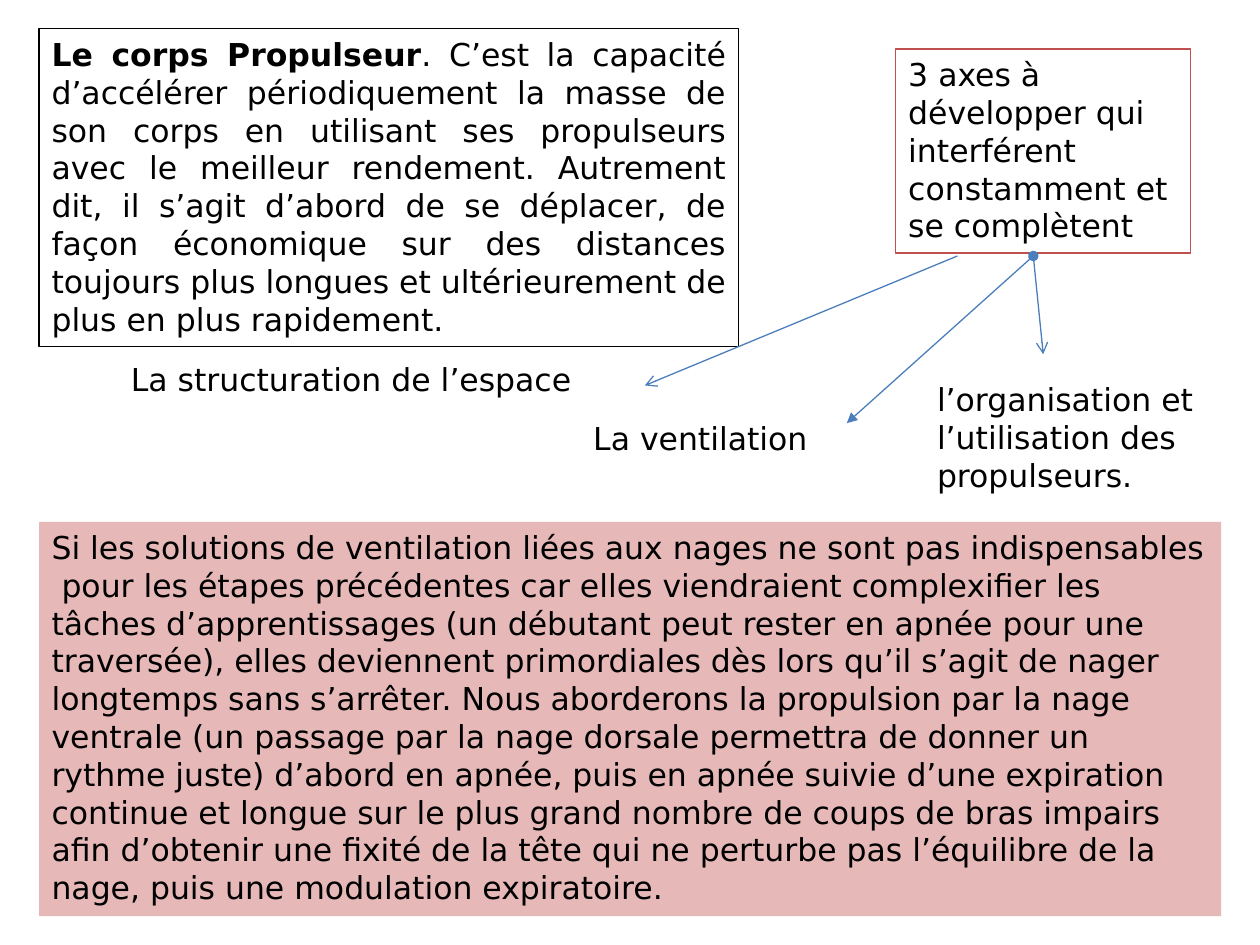
import pptx
import pptx.util
import pptx.dml.color
import pptx.enum.shapes
import pptx.enum.text
import pptx.oxml
import pptx.oxml.ns

Cm, Pt = pptx.util.Cm, pptx.util.Pt
FONT = "DejaVu Sans"


def rgb(value):
    return pptx.dml.color.RGBColor.from_string(value)


def write(sp, runs, align=pptx.enum.text.PP_ALIGN.LEFT):
    """Fill a shape with one paragraph made of (text, bold) runs."""
    tf = sp.text_frame
    tf.word_wrap = True
    tf.auto_size = pptx.enum.text.MSO_AUTO_SIZE.SHAPE_TO_FIT_TEXT
    tf.vertical_anchor = pptx.enum.text.MSO_ANCHOR.TOP
    p = tf.paragraphs[0]
    p.alignment = align
    for text, bold in runs:
        r = p.add_run()
        r.text = text
        r.font.name = FONT
        r.font.size = Pt(18)
        r.font.bold = bold
        r.font.color.rgb = rgb("000000")


def add_box(s, x, y, w, h, fill=None, line=None):
    sp = s.shapes.add_shape(pptx.enum.shapes.MSO_SHAPE.RECTANGLE,
                            Cm(x), Cm(y), Cm(w), Cm(h))
    sp.shadow.inherit = False
    if fill:
        sp.fill.solid()
        sp.fill.fore_color.rgb = rgb(fill)
    else:
        sp.fill.background()
    if line:
        sp.line.color.rgb = rgb(line)
        sp.line.width = Pt(0.75)
    else:
        sp.line.fill.background()
    return sp


def add_arrow(s, x1, y1, x2, y2, tail, head=None):
    c = s.shapes.add_connector(pptx.enum.shapes.MSO_CONNECTOR.STRAIGHT,
                               Cm(x1), Cm(y1), Cm(x2), Cm(y2))
    c.line.color.rgb = rgb("4B7EBC")
    c.line.width = Pt(0.75)
    ln = c.line._get_or_add_ln()
    for tag, kind in (("a:headEnd", head), ("a:tailEnd", tail)):
        if kind:
            end = pptx.oxml.xmlchemy.OxmlElement(tag)
            end.set("type", kind)
            ln.append(end)
    c._element.spPr.append(pptx.oxml.xmlchemy.OxmlElement("a:effectLst"))


def definition(s, x, y, w, h):
    sp = add_box(s, x, y, w, h, line="000000")
    write(sp, [
        ("Le corps Propulseur", True),
        (". C’est la capacité d’accélérer périodiquement la masse de son corps "
         "en utilisant ses propulseurs avec le meilleur rendement. Autrement dit, "
         "il s’agit d’abord de se déplacer, de façon économique sur des distances "
         "toujours plus longues et ultérieurement de plus en plus rapidement.", False),
    ], pptx.enum.text.PP_ALIGN.JUSTIFY)


def axes(s, x, y):
    # Source box
    sp = add_box(s, x + 15.67, y, 5.94, 4.11, line="C0504D")
    write(sp, [("3 axes à développer qui interférent constamment et se complètent", False)])

    # The three axes
    for text, dx, dy, w, h in (
            ("La structuration de l’espace", 0, 6.15, 9.93, 1.02),
            ("l’organisation et l’utilisation des propulseurs.", 16.25, 6.55, 6.15, 2.57),
            ("La ventilation", 9.32, 7.34, 5.16, 1.02)):
        tb = s.shapes.add_textbox(Cm(x + dx), Cm(y + dy), Cm(w), Cm(h))
        write(tb, [(text, False)])

    # Arrows from the box to each axis
    for start, dx, dy, tail, head in (
            (16.91, 10.61, 6.78, "arrow", None),
            (18.44, 14.68, 7.54, "triangle", "oval"),
            (18.44, 18.64, 6.15, "arrow", None)):
        add_arrow(s, x + start, y + 4.17, x + dx, y + dy, tail, head)


def conclusion(s, x, y, w, h):
    sp = add_box(s, x, y, w, h, fill="E6B9B8")
    write(sp, [(
        "Si les solutions de ventilation liées aux nages ne sont pas indispensables "
        " pour les étapes précédentes car elles viendraient complexifier les tâches "
        "d’apprentissages (un débutant peut rester en apnée pour une traversée), "
        "elles deviennent primordiales dès lors qu’il s’agit de nager longtemps sans "
        "s’arrêter. Nous aborderons la propulsion par la nage ventrale (un passage "
        "par la nage dorsale permettra de donner un rythme juste) d’abord en apnée, "
        "puis en apnée suivie d’une expiration continue et longue sur le plus grand "
        "nombre de coups de bras impairs afin d’obtenir une fixité de la tête qui ne "
        "perturbe pas l’équilibre de la nage, puis une modulation expiratoire.", False)])


def main():
    prs = pptx.Presentation()
    prs.slide_width, prs.slide_height = Cm(25.4), Cm(19.05)
    s = prs.slides.add_slide(prs.slide_layouts[6])
    definition(s, 0.79, 0.58, 14.1, 6.4)
    axes(s, 2.39, 0.99)
    conclusion(s, 0.79, 10.52, 23.83, 7.95)
    prs.save("out.pptx")


if __name__ == "__main__":
    main()
